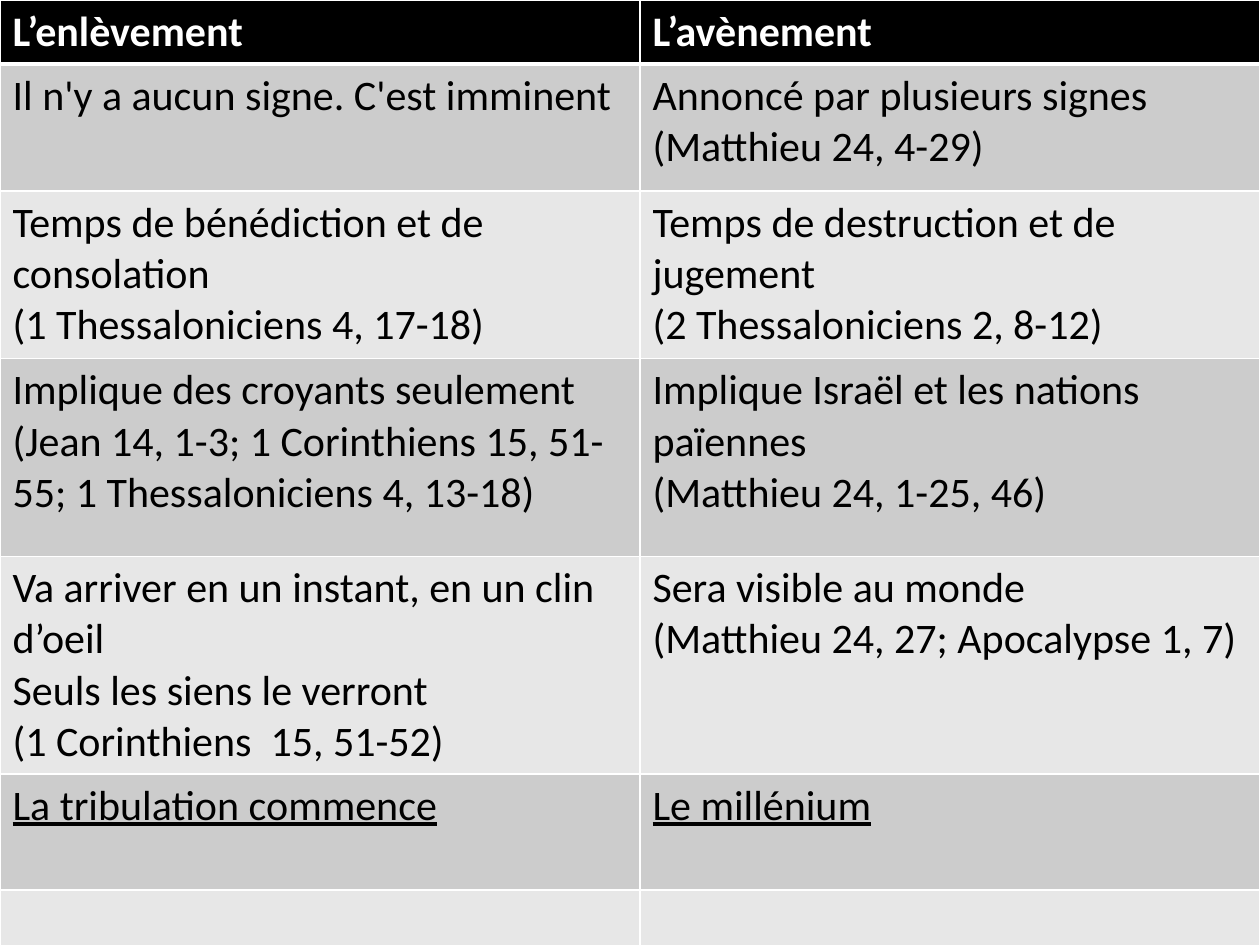
from lxml import etree
from pptx import Presentation
from pptx.dml.color import RGBColor
from pptx.enum.text import MSO_ANCHOR
from pptx.oxml.ns import qn
from pptx.util import Pt

TOP = MSO_ANCHOR.TOP
BLACK = RGBColor(0x00, 0x00, 0x00)
WHITE = RGBColor(0xFF, 0xFF, 0xFF)
DARK_BAND = RGBColor(0xCC, 0xCC, 0xCC)
LIGHT_BAND = RGBColor(0xE7, 0xE7, 0xE7)

SLIDE_WIDTH, SLIDE_HEIGHT = 720, 540
COLUMN_WIDTHS = [365.7, 354.3]
ROW_HEIGHTS = [36.5, 72.7, 95.8, 113, 95.8, 66.2, 60]
THIN, THICK = 1, 3

BODY_FORMAT = {"name": "Calibri", "size": Pt(24), "bold": False, "underline": False}
HEADER_FORMAT = {**BODY_FORMAT, "bold": True}
OUTCOME_FORMAT = {**BODY_FORMAT, "underline": True}

# Each row holds two cells; each cell is a list of paragraphs
COMPARISON = [
    (["L’enlèvement"], ["L’avènement"]),
    (["Il n'y a aucun signe. C'est imminent"],
     ["Annoncé par plusieurs signes", "(Matthieu 24, 4-29)"]),
    (["Temps de bénédiction et de consolation", "(1 Thessaloniciens 4, 17-18)"],
     ["Temps de destruction et de jugement", "(2 Thessaloniciens 2, 8-12)"]),
    (["Implique des croyants seulement",
      "(Jean 14, 1-3; 1 Corinthiens 15, 51-55; 1 Thessaloniciens 4, 13-18)"],
     ["Implique Israël et les nations païennes", "(Matthieu 24, 1-25, 46)"]),
    (["Va arriver en un instant, en un clin d’oeil", "Seuls les siens le verront",
      "(1 Corinthiens  15, 51-52)"],
     ["Sera visible au monde", "(Matthieu 24, 27; Apocalypse 1, 7)"]),
    (["La tribulation commence"], ["Le millénium"]),
    ([], []),
]
OUTCOME_ROW = 5


def set_borders(cell, widths):
    """Draw white borders; widths are points for left, right, top and bottom."""
    properties = cell._tc.get_or_add_tcPr()
    for index, (side, width) in enumerate(zip("LRTB", widths)):
        line = etree.Element(qn(f"a:ln{side}"), w=str(Pt(width)))
        fill = etree.SubElement(line, qn("a:solidFill"))
        etree.SubElement(fill, qn("a:srgbClr"), val=str(WHITE))
        properties.insert(index, line)


def write_cell(cell, lines, text_format, color):
    cell.vertical_anchor = TOP
    if not lines:
        return
    cell.text = "\n".join(lines)
    for paragraph in cell.text_frame.paragraphs:
        for run in paragraph.runs:
            for attribute, value in text_format.items():
                setattr(run.font, attribute, value)
            run.font.color.rgb = color


def add_comparison_table(slide, left, top, width, height):
    table = slide.shapes.add_table(
        len(COMPARISON), len(COLUMN_WIDTHS),
        Pt(left), Pt(top), Pt(width), Pt(height)).table
    for column, column_width in zip(table.columns, COLUMN_WIDTHS):
        column.width = Pt(column_width)

    for row_index, texts in enumerate(COMPARISON):
        table.rows[row_index].height = Pt(ROW_HEIGHTS[row_index])
        # Header row, then alternating bands
        if row_index == 0:
            background, color, text_format = BLACK, WHITE, HEADER_FORMAT
        else:
            background = DARK_BAND if row_index % 2 else LIGHT_BAND
            color = BLACK
            text_format = OUTCOME_FORMAT if row_index == OUTCOME_ROW else BODY_FORMAT
        top_width = THICK if row_index == 1 else THIN
        bottom_width = THICK if row_index == 0 else THIN
        for column_index, lines in enumerate(texts):
            cell = table.cell(row_index, column_index)
            cell.fill.solid()
            cell.fill.fore_color.rgb = background
            set_borders(cell, (THIN, THIN, top_width, bottom_width))
            write_cell(cell, lines, text_format, color)


def main():
    presentation = Presentation()
    presentation.slide_width = Pt(SLIDE_WIDTH)
    presentation.slide_height = Pt(SLIDE_HEIGHT)
    slide = presentation.slides.add_slide(presentation.slide_layouts[6])
    add_comparison_table(slide, 0, 0, SLIDE_WIDTH, SLIDE_HEIGHT)
    presentation.save("out.pptx")


if __name__ == "__main__":
    main()
